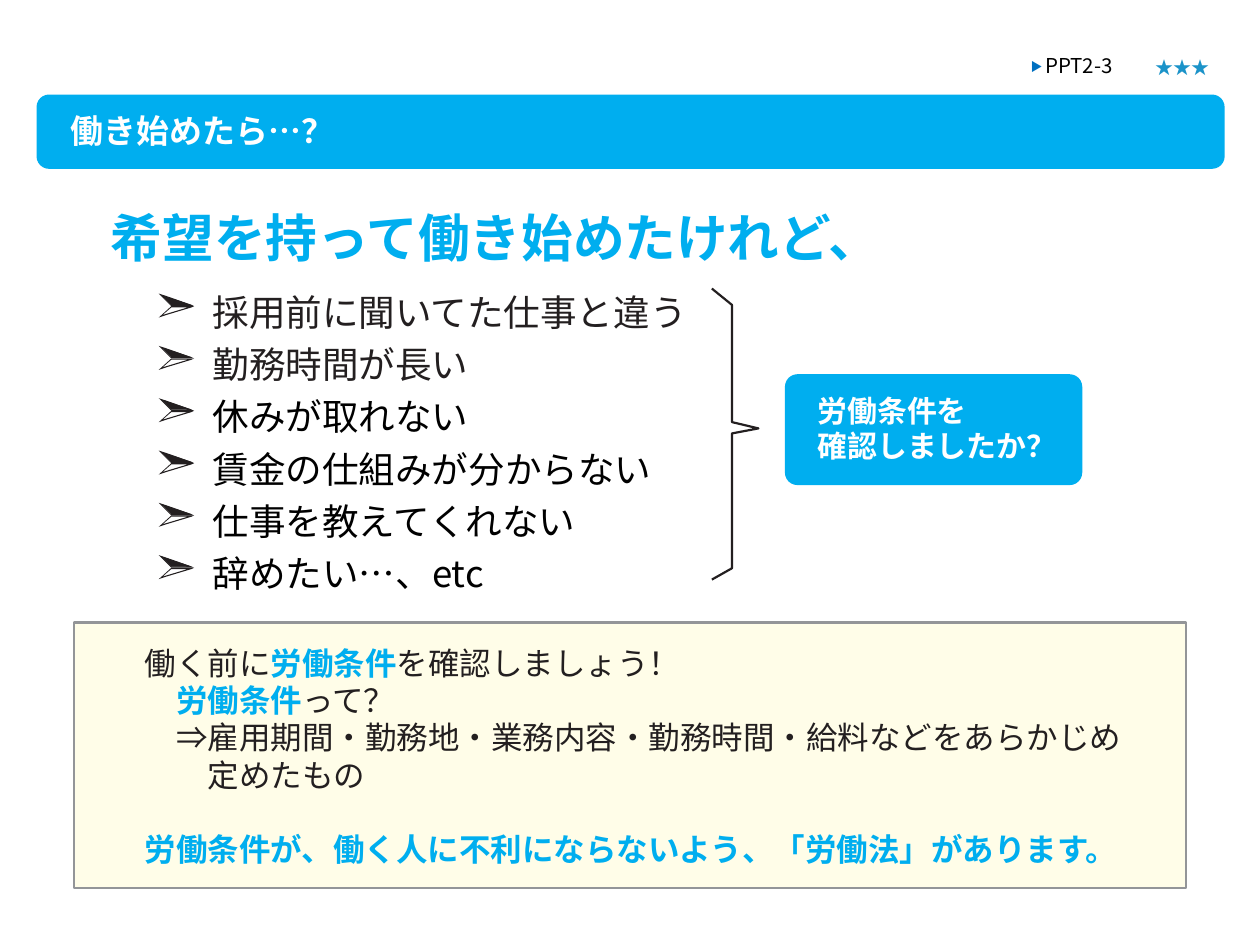
"""Build the slide on checking working conditions when starting a job."""
from dataclasses import dataclass

from lxml import etree
from pptx import Presentation
from pptx import util as u
from pptx.dml.color import RGBColor
from pptx.enum import shapes, text
from pptx.oxml import ns

FONT = "Noto Sans CJK JP"
CYAN = RGBColor(0x00, 0xAE, 0xEF)
INK = RGBColor(0x23, 0x1F, 0x20)
BLACK = RGBColor(0x00, 0x00, 0x00)
WHITE = RGBColor(0xFF, 0xFF, 0xFF)
CREAM = RGBColor(0xFF, 0xFD, 0xE8)
GRAY = RGBColor(0x93, 0x95, 0x98)
BLUE = RGBColor(0x00, 0x70, 0xC0)
STAR_BLUE = RGBColor(0x1B, 0x93, 0xC9)

LIST_PITCH = u.Pt(29.9)
CORNER = 0.1


@dataclass
class Run:
    text: str
    color: RGBColor
    bold: bool = False
    baseline: int = 0


@dataclass
class Line:
    runs: list[Run]
    indent: float = 0.01
    spacing: float | None = None
    before: float = 0


@dataclass
class Box:
    left: float
    top: float
    width: float
    height: float

    def lengths(self) -> list[u.Length]:
        return [u.Inches(v) for v in (self.left, self.top, self.width, self.height)]


@dataclass
class Label:
    box: Box
    size: float
    lines: list[Line]
    inset: tuple = (0, 0.02, 0, 0)
    wrap: bool = True


Points = list[tuple[float, float]]

ARROW_PARTS: list[list[Points]] = [
    [[(1.28, 2.34), (1.36, 2.42), (1.52, 2.42)]],
    [[(1.26, 2.33), (1.36, 2.43), (1.54, 2.43), (1.52, 2.42),
      (1.36, 2.42), (1.29, 2.35), (1.32, 2.35)],
     [(1.32, 2.35), (1.29, 2.35), (1.49, 2.42), (1.52, 2.42)]],
    [[(1.54, 2.43), (1.36, 2.43), (1.26, 2.52), (1.32, 2.5),
      (1.29, 2.5), (1.36, 2.44), (1.52, 2.44)],
     [(1.52, 2.44), (1.49, 2.44), (1.29, 2.5), (1.32, 2.5)]],
]
BRACKET: Points = [(5.65, 2.29), (5.81, 2.42), (5.81, 3.35), (6.02, 3.4),
                   (5.81, 3.44), (5.81, 4.51), (5.65, 4.6)]

TROUBLES = [
    ("採用前に聞いてた仕事と違う", INK),
    ("勤務時間が長い", INK),
    ("休みが取れない", BLACK),
    ("賃金の仕組みが分からない", BLACK),
    ("仕事を教えてくれない", BLACK),
    ("辞めたい…、etc", BLACK),
]

TITLE = Label(Box(0.55, 0.86, 6.53, 0.33), 18.8,
              [Line([Run("働き始めたら…？", WHITE, True)], before=1.1)])
ADVICE = Label(Box(0.59, 4.94, 8.82, 2.11), 18, [
    Line([Run("働く前に", INK), Run("労働条件", CYAN, True),
          Run("を確認しましょう！", INK)], 0.56, 21.4),
    Line([Run("労働条件", CYAN, True), Run("って？", INK)], 0.81, 21.2),
    Line([Run("⇒雇用期間・勤務地・業務内容・勤務時間・給料などをあらかじめ", INK)],
         0.81, 21.4),
    Line([Run("定めたもの", INK)], 1.06, 21.4),
    Line([Run("労働条件が、働く人に不利にならないよう、「労働法」があります。",
              CYAN, True)], 0.56, before=20.9),
], inset=(0, 0.17, 0, 0.17))
LABELS = [
    Label(Box(6.48, 3.12, 2.11, 0.57), 17.1,
          [Line([Run(t, WHITE, True)], spacing=19.8)
           for t in ("労働条件を", "確認しましたか？")], (0, 0.01, 0, 0)),
    Label(Box(1.68, 2.21, 5.53, 2.48), 20.9,
          [Line([Run(t, color)], spacing=LIST_PITCH.pt) for t, color in TROUBLES]),
    Label(Box(0.55, 1.61, 7.62, 0.51), 29.5,
          [Line([Run("希望を持って働き始めたけれど、", CYAN, True)], 0.33)]),
    Label(Box(8.17, 0.41, 0.99, 0.21), 11.7,
          [Line([Run("▶ ", BLUE, baseline=9000), Run("PPT2-3", BLACK)], before=1)],
          (0, 0.01, 0, 0)),
    Label(Box(9.07, 0.4, 0.63, 0.27), 10.3,
          [Line([Run("★★★", STAR_BLUE)], 0)], (0.1, 0.05, 0.1, 0.05), False),
]


def write(sp, label: Label) -> None:
    """Fill a shape's text frame with the label's lines."""
    tf = sp.text_frame
    left, top, right, bottom = (u.Inches(v) for v in label.inset)
    frame = {"word_wrap": label.wrap, "auto_size": text.MSO_AUTO_SIZE.NONE,
             "vertical_anchor": text.MSO_ANCHOR.TOP, "margin_left": left,
             "margin_top": top, "margin_right": right, "margin_bottom": bottom}
    for name, value in frame.items():
        setattr(tf, name, value)
    for i, line in enumerate(label.lines):
        p = tf.add_paragraph() if i else tf.paragraphs[0]
        layout = {"alignment": text.PP_ALIGN.LEFT, "space_before": u.Pt(line.before),
                  "line_spacing": u.Pt(line.spacing) if line.spacing else 1.0}
        for name, value in layout.items():
            setattr(p, name, value)
        pPr = p._p.get_or_add_pPr()
        pPr.set("marL", str(u.Inches(line.indent)))
        pPr.set("indent", "0")
        for run in line.runs:
            r = p.add_run()
            r.text = run.text
            font = {"name": FONT, "size": u.Pt(label.size), "bold": run.bold}
            for name, value in font.items():
                setattr(r.font, name, value)
            r.font.color.rgb = run.color
            rPr = r._r.get_or_add_rPr()
            etree.SubElement(rPr, ns.qn("a:ea"), typeface=FONT)
            if run.baseline:
                rPr.set("baseline", str(run.baseline))


def paint(sp, fill: RGBColor | None = None, line: RGBColor | None = None) -> None:
    """Set a shape's fill and outline, and drop its shadow."""
    sp.shadow.inherit = False
    if fill is None:
        sp.fill.background()
    else:
        sp.fill.solid()
        sp.fill.fore_color.rgb = fill
    if line is None:
        sp.line.fill.background()
    else:
        sp.line.color.rgb = line
        sp.line.width = u.Pt(1.25)


def add_panel(s, box: Box):
    """Add a cyan panel with rounded corners."""
    sp = s.shapes.add_shape(shapes.MSO_SHAPE.ROUNDED_RECTANGLE, *box.lengths())
    sp.adjustments[0] = CORNER / box.height
    paint(sp, CYAN)
    return sp


def add_outline(parent, contours: list[Points], dy: int = 0, close: bool = True):
    """Add a freeform made of one or more contours, moved down by dy."""
    paths = [[(u.Inches(x), u.Inches(y) + dy) for x, y in c] for c in contours]
    builder = parent.shapes.build_freeform(*paths[0][0])
    for i, path in enumerate(paths):
        if i:
            builder.move_to(*path[0])
        builder.add_line_segments(path[1:], close=close)
    return builder.convert_to_shape()


def main() -> None:
    """Draw the slide and save it."""
    prs = Presentation()
    prs.slide_width, prs.slide_height = u.Inches(10), u.Inches(7.5)
    s = prs.slides.add_slide(prs.slide_layouts[5])

    bar = add_panel(s, Box(0.29, 0.75, 9.43, 0.59))
    title = s.shapes.title
    title.left, title.top, title.width, title.height = TITLE.box.lengths()
    write(title, TITLE)
    bar.element.addnext(title.element)

    advice = s.shapes.add_shape(shapes.MSO_SHAPE.RECTANGLE, *ADVICE.box.lengths())
    paint(advice, CREAM, GRAY)
    write(advice, ADVICE)

    for row in range(len(TROUBLES)):
        group = s.shapes.add_group_shape()
        for contours in ARROW_PARTS:
            paint(add_outline(group, contours, row * LIST_PITCH), INK)
    paint(add_outline(s, [BRACKET], close=False), line=INK)
    add_panel(s, Box(6.23, 2.97, 2.36, 0.88))

    for label in LABELS:
        write(s.shapes.add_textbox(*label.box.lengths()), label)
    prs.save("out.pptx")


if __name__ == "__main__":
    main()
